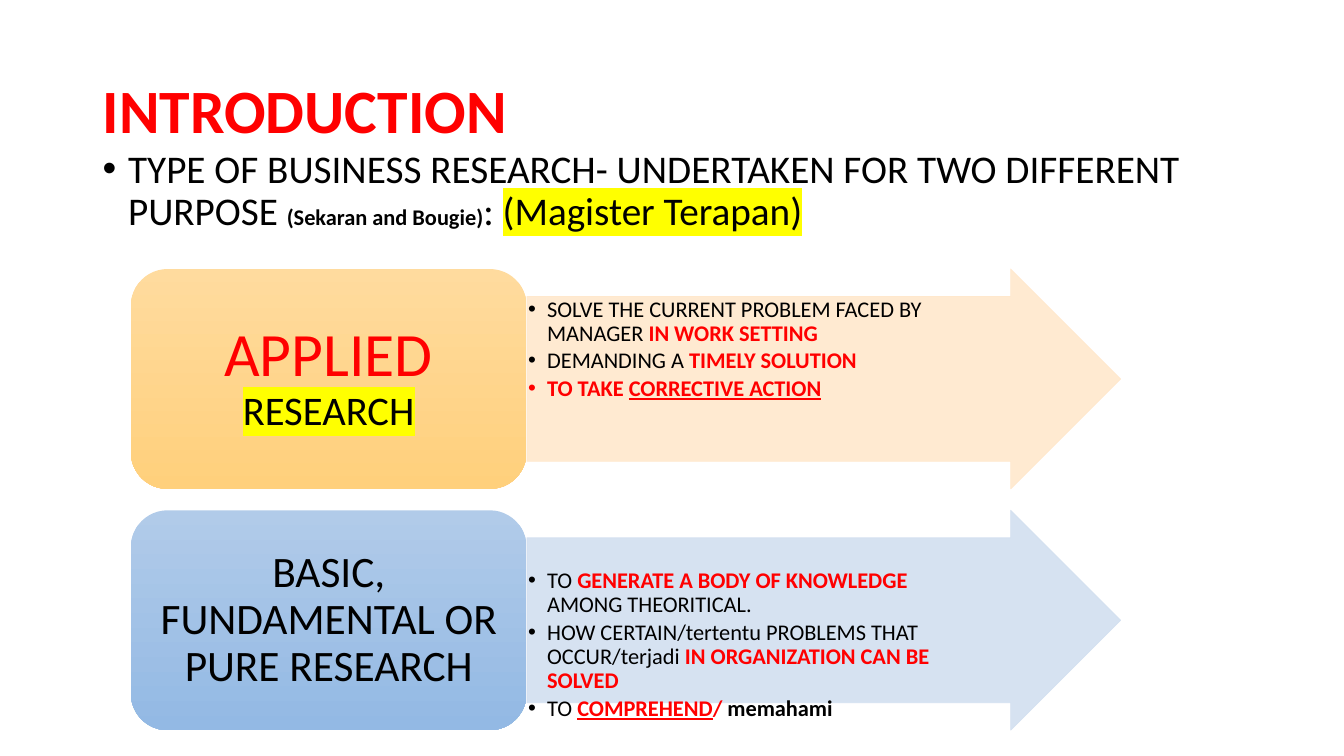
"""Build the slide on the two types of business research."""
import pptx
import pptx.dml.color
import pptx.enum.shapes
import pptx.enum.text
import pptx.oxml
import pptx.oxml.ns
import pptx.util

Cm = pptx.util.Cm
Pt = pptx.util.Pt
SHAPE = pptx.enum.shapes.MSO_SHAPE
ANCHOR = pptx.enum.text.MSO_ANCHOR
ALIGN = pptx.enum.text.PP_ALIGN
RED = "FF0000"
YELLOW = "FFFF00"
KEY = dict(color=RED, bold=True)


def rgb(value):
    return pptx.dml.color.RGBColor.from_string(value)


def add_element(parent, tag, **attrs):
    e = pptx.oxml.parse_xml(f"<a:{tag} {pptx.oxml.ns.nsdecls('a')}/>")
    for name, value in attrs.items():
        e.set(name, str(value))
    parent.append(e)
    return e


def add_run(p, text, size=16, color="000000", bold=False, underline=False, highlight=None):
    r = p.add_run()
    r.text = text
    r.font.size = Pt(size)
    r.font.bold = bold
    r.font.underline = underline
    r.font.color.rgb = rgb(color)
    if highlight:
        add_element(add_element(r.font._element, "highlight"), "srgbClr", val=highlight)
    r.font.name = "Calibri"


def fill_text(tf, paragraphs, align=ALIGN.LEFT, anchor=ANCHOR.TOP, insets=(0.25, 0.13, 0.25, 0.13),
              indent=None, after=0):
    tf.word_wrap = True
    tf.auto_size = pptx.enum.text.MSO_AUTO_SIZE.NONE
    tf.vertical_anchor = anchor
    tf.margin_left, tf.margin_top, tf.margin_right, tf.margin_bottom = map(Cm, insets)
    for i, runs in enumerate(paragraphs):
        p = tf.add_paragraph() if i else tf.paragraphs[0]
        p.alignment = align
        p.line_spacing = 0.9
        p.space_before = Pt(0)
        p.space_after = Pt(after)
        if indent:
            pPr = p._p.get_or_add_pPr()
            pPr.set("marL", str(Cm(indent)))
            pPr.set("indent", str(-Cm(indent)))
            add_element(pPr, "buFont", typeface="Arial")
            add_element(pPr, "buChar", char="•")
        for text, fmt in runs:
            add_run(p, text, **fmt)


def add_arrow(s, top, color, bullets, text_top):
    sp = s.shapes.add_shape(SHAPE.RIGHT_ARROW, Cm(13.28), Cm(top), Cm(14.96), Cm(5.54))
    sp.shadow.inherit = False
    sp.adjustments[0] = 0.75
    sp.adjustments[1] = 0.5
    sp.line.width = Pt(0.5)
    for fill in (sp.fill, sp.line.fill):
        fill.solid()
        fill.fore_color.rgb = rgb(color)
    for clr in sp._element.spPr.iter(pptx.oxml.ns.qn("a:srgbClr")):
        add_element(clr, "alpha", val=90000)
    fill_text(sp.text_frame, bullets, insets=(0.03, text_top, 1.4, 0.03), indent=0.48, after=2.5)


def add_label(s, top, colors, runs, insets):
    sp = s.shapes.add_shape(SHAPE.ROUNDED_RECTANGLE, Cm(3.3), Cm(top), Cm(9.97), Cm(5.54))
    sp.shadow.inherit = False
    sp.line.fill.background()
    sp.fill.gradient()
    sp.fill.gradient_angle = 270
    for stop, color, position in zip(sp.fill.gradient_stops, colors, (0, 1)):
        stop.color.rgb = rgb(color)
        stop.position = position
    fill_text(sp.text_frame, [runs], ALIGN.CENTER, ANCHOR.MIDDLE, insets)


def main():
    prs = pptx.Presentation()
    prs.slide_width, prs.slide_height = Cm(33.87), Cm(19.05)
    s = prs.slides.add_slide(prs.slide_layouts[5])

    title = s.shapes.title
    title.left, title.top, title.width, title.height = Cm(2.34), Cm(1.02), Cm(29.21), Cm(3.68)
    fill_text(title.text_frame, [[("INTRODUCTION", dict(size=44, **KEY))]], anchor=ANCHOR.MIDDLE)

    body = s.shapes.add_textbox(Cm(2.34), Cm(3.63), Cm(29.21), Cm(2.8))
    fill_text(body.text_frame, [[
        ("TYPE OF BUSINESS RESEARCH- UNDERTAKEN FOR TWO DIFFERENT PURPOSE ", dict(size=28)),
        ("(Sekaran and Bougie)", dict(bold=True)),
        (": ", dict(size=28)),
        ("(Magister Terapan)", dict(size=28, highlight=YELLOW)),
    ]], indent=0.64)

    applied = [
        [("SOLVE THE CURRENT PROBLEM FACED BY MANAGER ", {}), ("IN WORK SETTING", KEY)],
        [("DEMANDING A ", {}), ("TIMELY SOLUTION", KEY)],
        [("TO TAKE ", KEY), ("CORRECTIVE ACTION", dict(underline=True, **KEY))],
    ]
    basic = [
        [("TO ", {}), ("GENERATE A BODY OF KNOWLEDGE ", KEY), ("AMONG THEORITICAL.", {})],
        [("HOW CERTAIN/tertentu PROBLEMS THAT OCCUR/terjadi ", {}),
         ("IN ORGANIZATION CAN BE SOLVED", KEY)],
        [("TO ", {}), ("COMPREHEND", dict(underline=True, **KEY)), ("/ ", KEY),
         ("memahami", dict(bold=True))],
    ]
    applied_label = [("APPLIED", dict(size=44, color=RED)), (" ", dict(size=29)),
                     ("RESEARCH", dict(size=29, highlight=YELLOW))]
    basic_label = [("BASIC, FUNDAMENTAL OR PURE RESEARCH", dict(size=31))]
    rows = [
        ("FFE8CC", applied, 0.03, ("FFDB9E", "FFD07C"), applied_label, (0.46, 0.23, 0.46, 0.23)),
        ("D2DFF0", basic, 0.79, ("B1CBE9", "93B9E4"), basic_label, (0.33, 0.15, 0.33, 0.15)),
    ]
    for i, (color, bullets, text_top, colors, label, insets) in enumerate(rows):
        top = 6.78 + i * 6.08
        add_arrow(s, top, color, bullets, text_top)
        add_label(s, top, colors, label, insets)

    prs.save("out.pptx")


if __name__ == "__main__":
    main()
